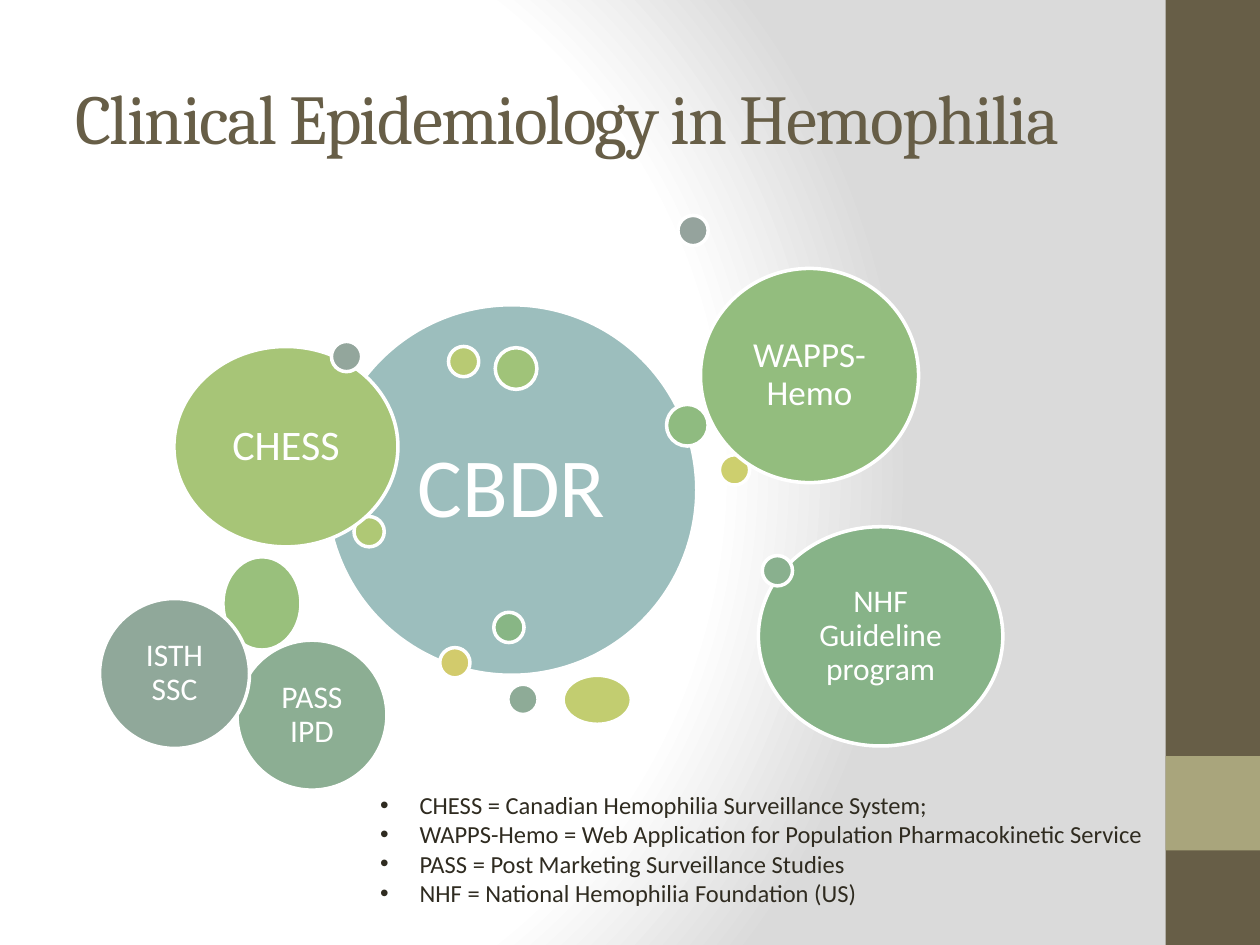
import pptx
import pptx.dml.color
import pptx.enum.shapes
import pptx.enum.text
import pptx.oxml
import pptx.oxml.ns
import pptx.util

Pt = pptx.util.Pt
ALIGN = pptx.enum.text.PP_ALIGN
ANCHOR = pptx.enum.text.MSO_ANCHOR
SHAPES = pptx.enum.shapes.MSO_SHAPE

THEME = {
    "heading_font": "Cambria",
    "body_font": "Calibri",
    "brown": "675E47",
    "khaki": "A9A57C",
    "ink": "2F2B20",
    "white": "FFFFFF",
    "gray": "DADADA",
    "title_size": 40,
    "note_size": 14,
}
TITLE = "Clinical Epidemiology in Hemophilia"
NOTES = [
    "CHESS = Canadian Hemophilia Surveillance System;",
    "WAPPS-Hemo = Web Application for Population Pharmacokinetic Service",
    "PASS = Post Marketing Surveillance Studies",
    "NHF = National Hemophilia Foundation (US)",
]
SIDEBAR = [
    ((666, 0, 54, 540), THEME["brown"]),
    ((666, 432, 54, 54), THEME["khaki"]),
]
DOT = (17.3, 17.3)
RING = (23.8, 23.8)
DISC = (85.7, 85.7)
BUBBLES = [
    ((186.5, 174.2), (211.7, 211.7), "9CBEBD", "CBDR", 48, 14.4),
    ((251.3, 370.1), DOT, "D2CB6C"),
    ((411.1, 259.9), DOT, "CDCF6E"),
    ((321.8, 385.9), (39, 28), "C2CD70"),
    ((256.3, 198), DOT, "B8CA73"),
    ((202.3, 295.2), DOT, "AFC875"),
    ((99.4, 198), (128, 114.5), "A7C577", "CHESS", 24, 7.2),
    ((283, 198.7), RING, "A0C379"),
    ((127.4, 318.2), (44.6, 53.3), "99C07C"),
    ((400.3, 153.4), (124.6, 122.4), "93BD7E", "WAPPS-Hemo", 20, 5.8),
    ((380.9, 231.1), RING, "8FBB80"),
    ((112.3, 374.4), DOT, "8BB882"),
    ((282.2, 349.9), DOT, "88B685"),
    ((433.4, 301), (139.7, 125.3), "87B388", "NHF Guideline program", 18, 5),
    ((435.6, 317.5), DOT, "89B08E"),
    ((135.4, 365.8), DISC, "8CAE93", "PASS IPD", 18, 5),
    ((290.2, 391), DOT, "8EAB97"),
    ((56.9, 342), DISC, "90A89A", "ISTH SSC", 18, 5),
    ((189.4, 195.1), DOT, "93A69C"),
    ((387.4, 123.1), DOT, "95A39D"),
]


def color(value):
    return pptx.dml.color.RGBColor.from_string(value)


def add_bullet(paragraph, indent):
    properties = paragraph._p.get_or_add_pPr()
    properties.set("marL", str(Pt(indent)))
    properties.set("indent", str(-Pt(indent)))
    for tag, name, value in (("buFont", "typeface", "Arial"), ("buChar", "char", "•")):
        element = properties.makeelement(pptx.oxml.ns.qn("a:" + tag), {name: value})
        properties.append(element)


def write_text(shape, lines, *, size, ink, font=THEME["body_font"], align=ALIGN.LEFT,
               anchor=ANCHOR.MIDDLE, inset=None, line_spacing=None, tracking=None,
               bullet_indent=None):
    frame = shape.text_frame
    frame.word_wrap = True
    frame.vertical_anchor = anchor
    if inset is not None:
        frame.margin_left = frame.margin_right = Pt(inset)
        frame.margin_top = frame.margin_bottom = Pt(inset)
    for index, line in enumerate(lines):
        paragraph = frame.add_paragraph() if index else frame.paragraphs[0]
        if bullet_indent:
            add_bullet(paragraph, bullet_indent)
        paragraph.alignment = align
        if line_spacing:
            paragraph.line_spacing = line_spacing
        run = paragraph.add_run()
        run.text = line
        run.font.name = font
        run.font.size = Pt(size)
        run.font.color.rgb = color(ink)
        if tracking:
            run._r.get_or_add_rPr().set("spc", str(tracking * 100))


def add_shape(slide, kind, box, fill, outline=None):
    shape = slide.shapes.add_shape(kind, *map(Pt, box))
    shape.shadow.inherit = False
    shape.fill.solid()
    shape.fill.fore_color.rgb = color(fill)
    if outline:
        shape.line.color.rgb = color(outline)
        shape.line.width = Pt(2)
    else:
        shape.line.fill.background()
    return shape


def paint_background(slide):
    slide.background.fill.gradient()
    gradient = slide.element.find(".//" + pptx.oxml.ns.qn("a:gradFill"))
    stops = [(0, THEME["white"]), (75, THEME["white"]), (100, THEME["gray"])]
    stop_xml = "".join(
        f'<a:gs pos="{position * 1000}"><a:srgbClr val="{value}"/></a:gs>'
        for position, value in stops
    )
    radial = pptx.oxml.parse_xml(
        f'<a:gradFill {pptx.oxml.ns.nsdecls("a")} rotWithShape="1">'
        f'<a:gsLst>{stop_xml}</a:gsLst><a:path path="circle">'
        '<a:fillToRect l="20000" t="50000" r="100000" b="50000"/>'
        "</a:path></a:gradFill>"
    )
    gradient.getparent().replace(gradient, radial)


def main():
    presentation = pptx.Presentation()
    presentation.slide_width, presentation.slide_height = Pt(720), Pt(540)
    slide = presentation.slides.add_slide(presentation.slide_layouts[6])
    paint_background(slide)

    for box, fill in SIDEBAR:
        add_shape(slide, SHAPES.RECTANGLE, box, fill)

    title = slide.shapes.add_textbox(*map(Pt, (36, 21.6, 600, 90)))
    write_text(title, [TITLE], size=THEME["title_size"], ink=THEME["brown"],
               font=THEME["heading_font"], tracking=-1)

    for position, extent, fill, *label in BUBBLES:
        bubble = add_shape(slide, SHAPES.OVAL, position + extent, fill, THEME["white"])
        if label:
            text, size, inset = label
            write_text(bubble, [text], size=size, ink=THEME["white"], inset=inset,
                       align=ALIGN.CENTER, line_spacing=0.9)

    notes = slide.shapes.add_textbox(*map(Pt, (210.2, 447.8, 454.3, 92.2)))
    write_text(notes, NOTES, size=THEME["note_size"], ink=THEME["ink"],
               anchor=ANCHOR.TOP, bullet_indent=22.5)

    presentation.save("out.pptx")


if __name__ == "__main__":
    main()
